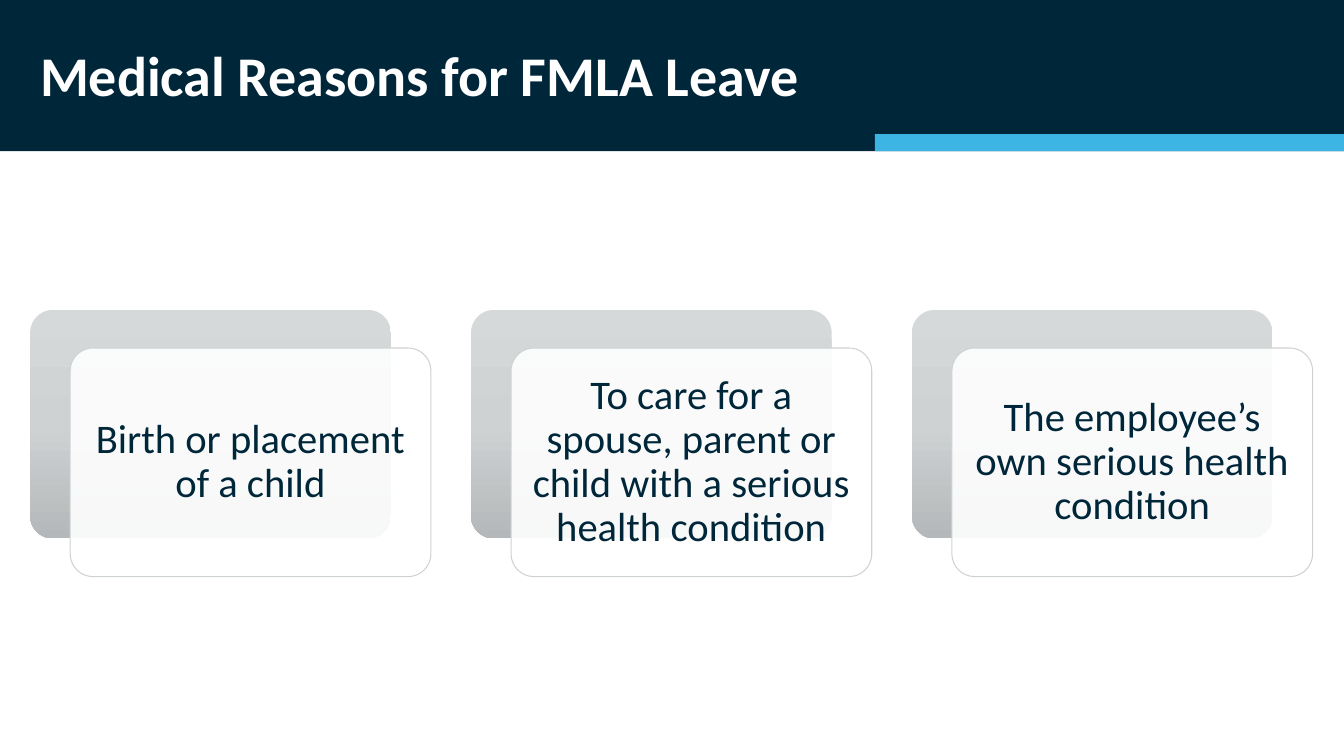
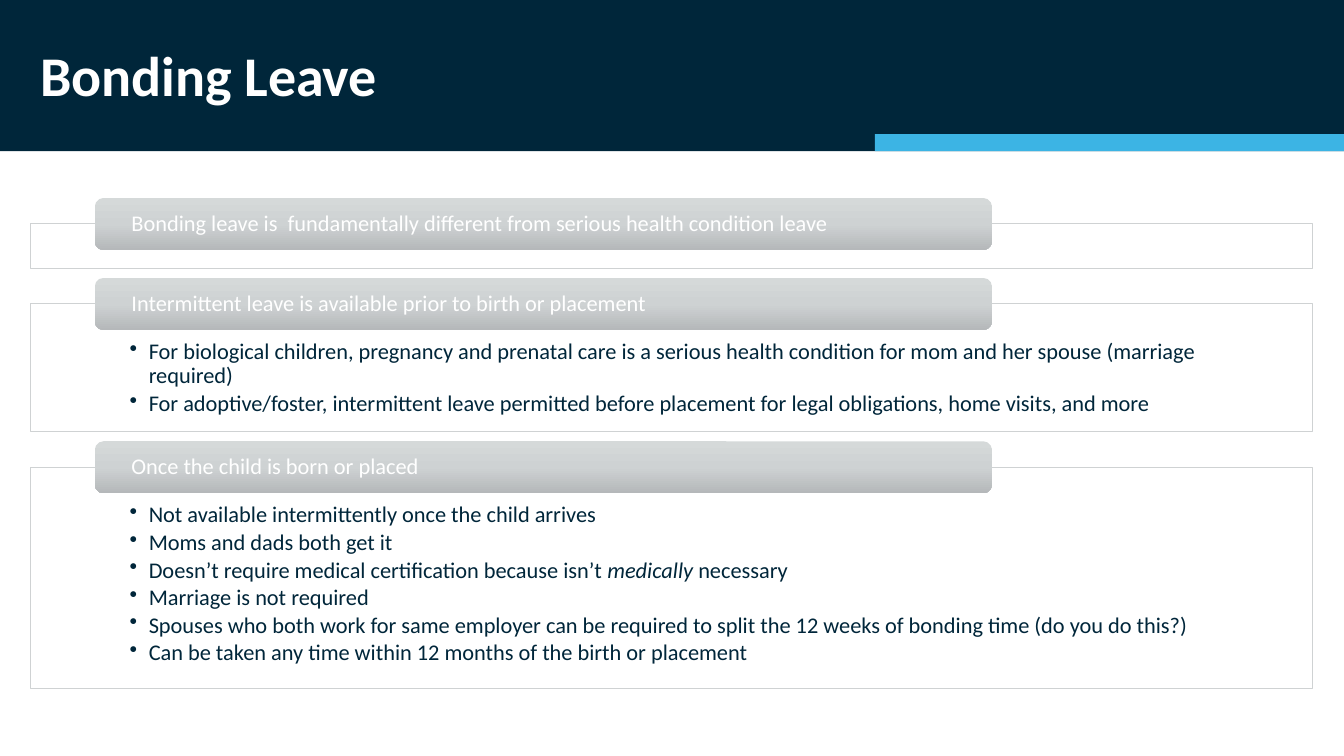
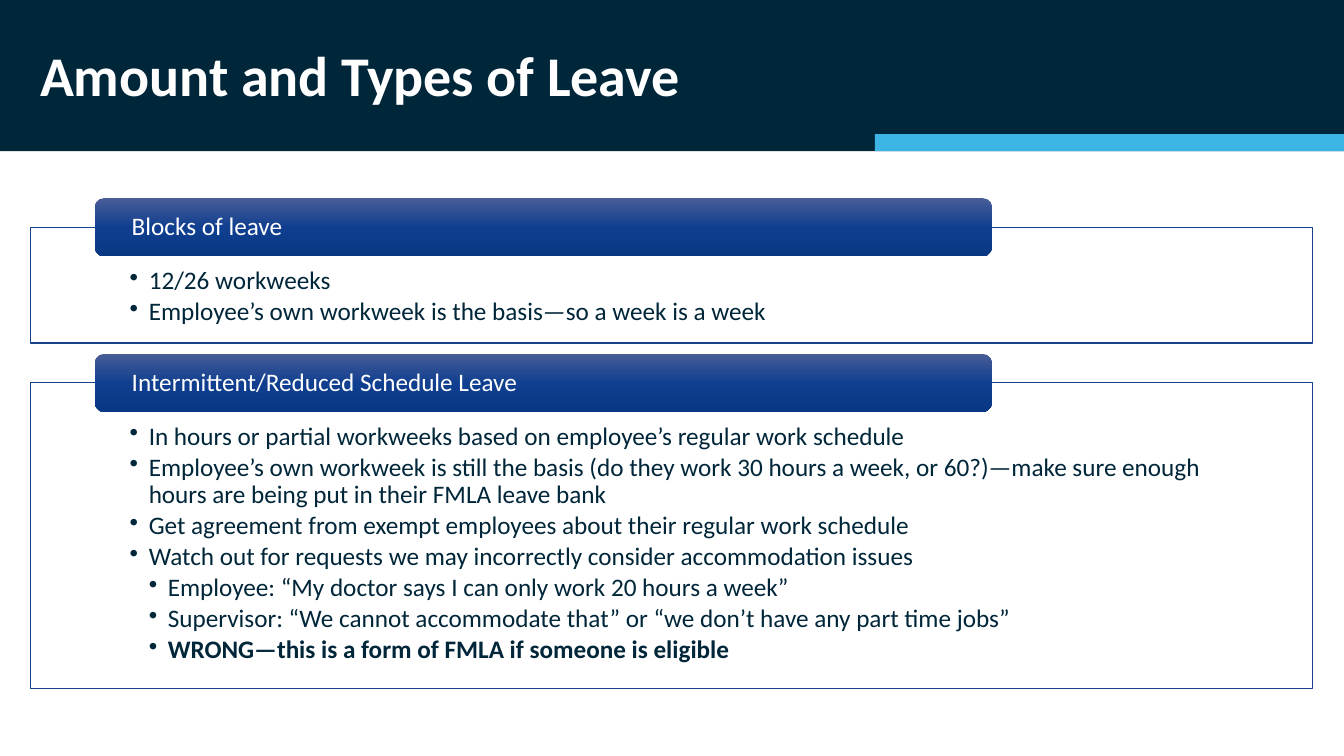
"""Build three slides on family and medical leave."""
from copy import deepcopy

from lxml import etree
from pptx import Presentation
from pptx.dml.color import RGBColor
from pptx.enum.shapes import MSO_SHAPE
from pptx.enum.text import MSO_ANCHOR, MSO_AUTO_SIZE, PP_ALIGN
from pptx.oxml.ns import qn
from pptx.util import Cm, Pt

RECT, ROUNDED = MSO_SHAPE.RECTANGLE, MSO_SHAPE.ROUNDED_RECTANGLE
LEFT, CENTER = PP_ALIGN.LEFT, PP_ALIGN.CENTER
TOP, MIDDLE = MSO_ANCHOR.TOP, MSO_ANCHOR.MIDDLE
NO_AUTOFIT = MSO_AUTO_SIZE.NONE

FONT = "Calibri"
NAVY = RGBColor(0x00, 0x26, 0x3A)
SKY = RGBColor(0x3C, 0xB4, 0xE4)
WHITE = RGBColor(0xFF, 0xFF, 0xFF)
GREY_LINE = RGBColor(0xCF, 0xD2, 0xD3)
BLUE_LINE = RGBColor(0x17, 0x42, 0x8A)
GREY_BLEND = [RGBColor(0xD5, 0xD9, 0xD9), RGBColor(0xCE, 0xD2, 0xD3), RGBColor(0xB5, 0xB8, 0xBA)]
BLUE_BLEND = [RGBColor(0x49, 0x5D, 0x97), RGBColor(0x10, 0x3F, 0x8F), RGBColor(0x08, 0x37, 0x83)]

SLIDE_W, SLIDE_H = 33.87, 19.05
MARGIN, CONTENT_W = 0.76, 32.31

REASONS = [
    "Birth or placement of a child",
    "To care for a spouse, parent or child with a serious health condition",
    "The employee’s own serious health condition",
]

BONDING = [
    ("Bonding leave is  fundamentally different from serious health condition leave", 1.12, []),
    ("Intermittent leave is available prior to birth or placement", 3.22, [
        (1, "For biological children, pregnancy and prenatal care is a serious health condition "
            "for mom and her spouse (marriage required)"),
        (1, "For adoptive/foster, intermittent leave permitted before placement for legal "
            "obligations, home visits, and more"),
    ]),
    ("Once the child is born or placed", 5.58, [
        (1, "Not available intermittently once the child arrives"),
        (1, "Moms and dads both get it"),
        (1, "Doesn’t require medical certification because isn’t ", ("medically", "italic"),
         " necessary"),
        (1, "Marriage is not required"),
        (1, "Spouses who both work for same employer can be required to split the 12 weeks of "
            "bonding time (do you do this?)"),
        (1, "Can be taken any time within 12 months of the birth or placement"),
    ]),
]

AMOUNTS = [
    ("Blocks of leave", 2.92, [
        (1, "12/26 workweeks"),
        (1, "Employee’s own workweek is the basis—so a week is a week"),
    ]),
    ("Intermittent/Reduced Schedule Leave", 7.71, [
        (1, "In hours or partial workweeks based on employee’s regular work schedule"),
        (1, "Employee’s own workweek is still the basis (do they work 30 hours a week, or 60?)"
            "—make sure enough hours are being put in their FMLA leave bank"),
        (1, "Get agreement from exempt employees about their regular work schedule"),
        (1, "Watch out for requests we may incorrectly consider accommodation issues"),
        (2, "Employee: “My doctor says I can only work 20 hours a week”"),
        (2, "Supervisor: “We cannot accommodate that” or “we don’t have any part time jobs”"),
        (2, ("WRONG—this is a form of FMLA if someone is eligible", "bold")),
    ]),
]


def add_block(slide, kind, x, y, w, h, color=WHITE, outline=None, radius=None):
    block = slide.shapes.add_shape(kind, Cm(x), Cm(y), Cm(w), Cm(h))
    block.shadow.inherit = False
    block.fill.solid()
    block.fill.fore_color.rgb = color
    if outline is None:
        block.line.fill.background()
    else:
        block.line.color.rgb = outline
        block.line.width = Pt(0.75)
        tint = block._element.spPr.find(qn("a:solidFill"))[0]
        etree.SubElement(tint, qn("a:alpha"), val="90000")
    if radius is not None:
        block.adjustments[0] = radius
    return block


def blend(block, colors):
    block.fill.gradient()
    block.fill.gradient_angle = 270
    stops = block._element.spPr.find(qn("a:gradFill")).find(qn("a:gsLst"))
    stops.insert(1, deepcopy(stops[0]))
    for index, (stop, color) in enumerate(zip(block.fill.gradient_stops, colors)):
        stop.position = index / 2
        stop.color.rgb = color


def set_frame(frame, anchor, left, top, right, bottom):
    frame.word_wrap = True
    frame.auto_size = NO_AUTOFIT
    frame.vertical_anchor = anchor
    frame.margin_left, frame.margin_top = Cm(left), Cm(top)
    frame.margin_right, frame.margin_bottom = Cm(right), Cm(bottom)


def style(paragraph, size, color, align=LEFT):
    paragraph.alignment = align
    paragraph.line_spacing = 0.9
    paragraph.space_before = Pt(0)
    paragraph.font.name = FONT
    paragraph.font.size = Pt(size)
    paragraph.font.color.rgb = color


def add_bullets(frame, bullets, size):
    for index, (level, *parts) in enumerate(bullets):
        paragraph = frame.add_paragraph() if index else frame.paragraphs[0]
        for part in parts:
            words, emphasis = (part, None) if isinstance(part, str) else part
            run = paragraph.add_run()
            run.text = words
            if emphasis:
                setattr(run.font, emphasis, True)
        style(paragraph, size, NAVY)
        if index:
            paragraph.space_before = Pt(0.15 * size)
        paragraph.level = level
        properties = paragraph._p.get_or_add_pPr()
        properties.set("marL", str(Cm(0.48 * level)))
        properties.set("indent", str(-Cm(0.48)))
        bullet = etree.Element(qn("a:buChar"), char="•")
        properties.find(qn("a:defRPr")).addprevious(bullet)


def add_titled_slide(deck, text):
    slide = deck.slides.add_slide(deck.slide_layouts[5])
    title = slide.shapes.title
    title.left, title.top, title.width, title.height = Cm(MARGIN), Cm(0.36), Cm(CONTENT_W), Cm(3.23)
    title.text_frame.text = text
    set_frame(title.text_frame, MIDDLE, 0.25, 0.13, 0.25, 0.13)
    style(title.text_frame.paragraphs[0], 40, WHITE)
    title.text_frame.paragraphs[0].font.bold = True
    return slide


def move_bands_to_layout(slide):
    bands = [
        add_block(slide, RECT, 0, 0, SLIDE_W, 3.81, NAVY),
        add_block(slide, RECT, 22.05, 3.38, SLIDE_W - 22.05, 0.43, SKY),
    ]
    for position, band in enumerate(bands, 2):
        slide.slide_layout.shapes._spTree.insert(position, band._element)


def add_reason_cards(slide):
    width, height, top, step = 9.09, 5.76, 7.81, 11.11
    for index, reason in enumerate(REASONS):
        left = MARGIN + index * step
        blend(add_block(slide, ROUNDED, left, top, width, height, radius=0.1), GREY_BLEND)
        card = add_block(slide, ROUNDED, left + 1.01, top + 0.96, width, height,
                         outline=GREY_LINE, radius=0.1)
        card.text_frame.text = reason
        set_frame(card.text_frame, MIDDLE, 0.3, 0.3, 0.3, 0.3)
        style(card.text_frame.paragraphs[0], 29, NAVY, CENTER)


def add_sections(slide, sections, size, tab_height, gap, outline, colors):
    top = 4.99
    for heading, height, bullets in sections:
        panel_top = top + tab_height / 2
        panel = add_block(slide, RECT, MARGIN, panel_top, CONTENT_W, height, outline=outline)
        set_frame(panel.text_frame, TOP, 2.51, 0.7 * tab_height, 2.51, 0.3)
        add_bullets(panel.text_frame, bullets, size)
        tab = add_block(slide, ROUNDED, 2.39, top, 22.61, tab_height, radius=0.167)
        blend(tab, colors)
        tab.text_frame.text = heading
        set_frame(tab.text_frame, MIDDLE, 0.86, 0, 0.86, 0)
        style(tab.text_frame.paragraphs[0], size, WHITE)
        top = panel_top + height + gap


def main():
    deck = Presentation()
    deck.slide_width, deck.slide_height = Cm(SLIDE_W), Cm(SLIDE_H)
    reasons = add_titled_slide(deck, "Medical Reasons for FMLA Leave")
    move_bands_to_layout(reasons)
    add_reason_cards(reasons)
    bonding = add_titled_slide(deck, "Bonding Leave")
    add_sections(bonding, BONDING, 16, 1.31, 0.24, GREY_LINE, GREY_BLEND)
    amounts = add_titled_slide(deck, "Amount and Types of Leave")
    add_sections(amounts, AMOUNTS, 18, 1.47, 0.27, BLUE_LINE, BLUE_BLEND)
    deck.save("out.pptx")


if __name__ == "__main__":
    main()
